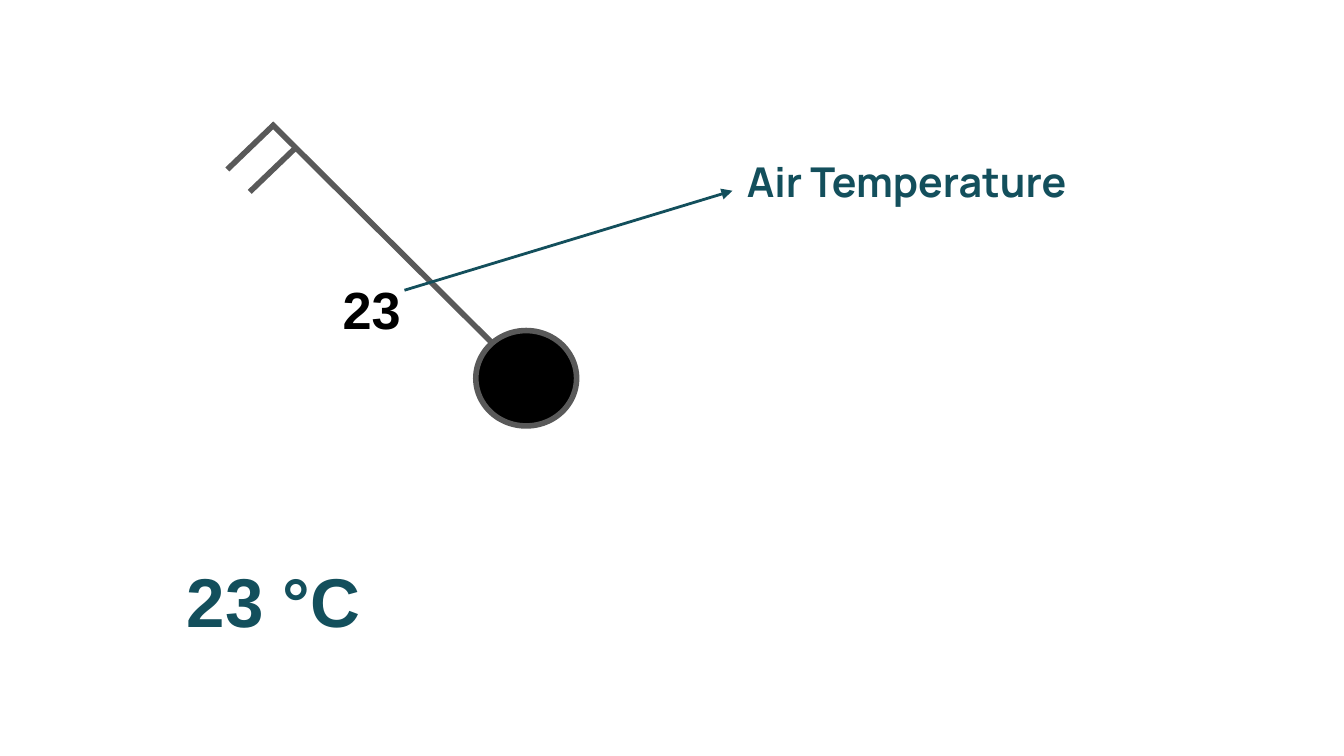
from pptx import Presentation
from pptx.dml.color import RGBColor
from pptx.enum.shapes import MSO_CONNECTOR, MSO_SHAPE
from pptx.enum.text import MSO_ANCHOR, PP_ALIGN
from pptx.oxml.ns import qn
from pptx.util import Pt
from lxml import etree

STRAIGHT = MSO_CONNECTOR.STRAIGHT
OVAL = MSO_SHAPE.OVAL
TOP = MSO_ANCHOR.TOP
CENTER = PP_ALIGN.CENTER
TEAL = "134F5C"
GRAY = "595959"
BLACK = "000000"


def color(value):
    """Turn a hex string into a colour."""
    return RGBColor.from_string(value)


def apply_format(target, values):
    """Set each attribute named in a dict of format values."""
    for name, value in values.items():
        setattr(target, name, value)


def add_label(page, text, bounds, font, size, shade, top_inset):
    """Add a centred bold label."""
    box = page.shapes.add_textbox(*map(Pt, bounds))
    frame = box.text_frame
    apply_format(frame, {
        "word_wrap": True, "vertical_anchor": TOP,
        "margin_left": 0, "margin_right": 0,
        "margin_top": Pt(top_inset), "margin_bottom": Pt(7.2),
    })
    para = frame.paragraphs[0]
    para.alignment = CENTER
    span = para.add_run()
    span.text = text
    apply_format(span.font, {"name": font, "size": Pt(size), "bold": True})
    span.font.color.rgb = color(shade)


def add_line(page, start, end, shade=GRAY, width=3, arrow=False):
    """Add a straight line, with an arrowhead at its end if asked."""
    line = page.shapes.add_connector(STRAIGHT, *map(Pt, start + end))
    line.line.color.rgb = color(shade)
    line.line.width = Pt(width)
    properties = line._element.spPr
    if arrow:
        head = etree.SubElement(properties.find(qn("a:ln")), qn("a:tailEnd"))
        head.set("type", "triangle")
    etree.SubElement(properties, qn("a:effectLst"))


def add_station(page, bounds):
    """Add the filled station circle."""
    circle = page.shapes.add_shape(OVAL, *map(Pt, bounds))
    circle.shadow.inherit = False
    circle.fill.solid()
    circle.fill.fore_color.rgb = color(BLACK)
    circle.line.color.rgb = color(GRAY)
    circle.line.width = Pt(3)


def main():
    """Build the station model slide."""
    deck = Presentation()
    apply_format(deck, {"slide_width": Pt(720), "slide_height": Pt(405)})
    page = deck.slides.add_slide(deck.slide_layouts[6])

    add_label(page, "Air Temperature", (392.4, 78.5, 186.5, 36.7), "Manrope", 22, TEAL, 5.5)
    add_station(page, (254.9, 177.1, 54, 51.1))
    add_line(page, (145.4, 66.2), (263.5, 183.6))
    add_line(page, (216.7, 155.5), (392.4, 102.2), TEAL, 1.5, arrow=True)
    add_label(page, "23 °C", (-45.4, 289.4, 383.8, 83.5), "Arial", 37, TEAL, 9.7)
    for x, y in ((147.2, 66.4), (159.2, 78.4)):
        add_line(page, (x, y), (x - 25.4, y + 24.4))
    add_label(page, "23", (118.8, 139, 160.6, 61.9), "Arial", 28, BLACK, 9.7)

    deck.save("out.pptx")


if __name__ == "__main__":
    main()
